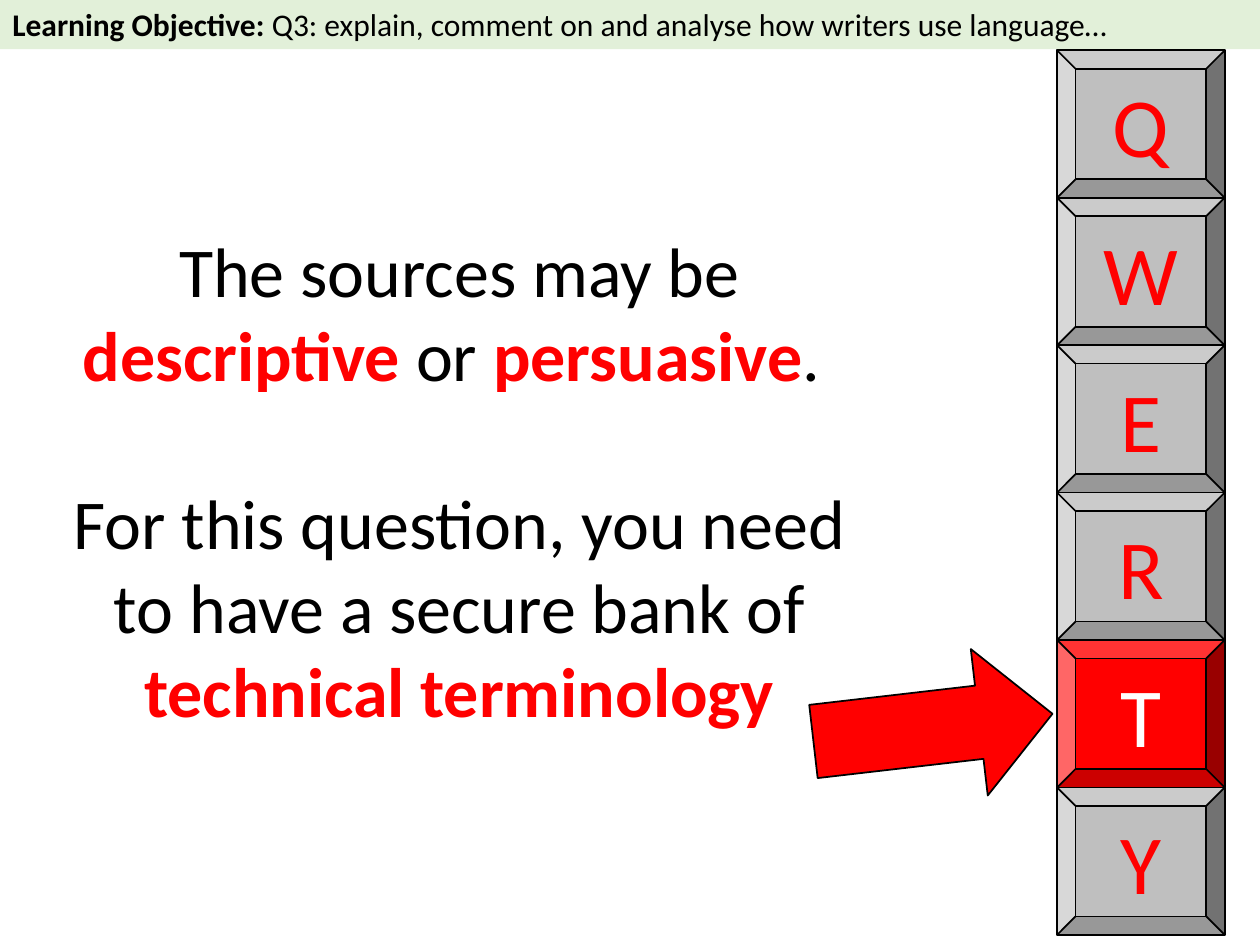
"""Build the QWERTY key slide about descriptive and persuasive sources."""
from pptx import Presentation
from pptx.dml.color import RGBColor
from pptx.enum.shapes import MSO_SHAPE
from pptx.enum.text import MSO_ANCHOR, PP_ALIGN
from pptx.util import Pt

PX = 9144
BLACK = RGBColor(0x00, 0x00, 0x00)
WHITE = RGBColor(0xFF, 0xFF, 0xFF)
RED = RGBColor(0xFF, 0x00, 0x00)
GREY = RGBColor(0xBF, 0xBF, 0xBF)
PALE_GREEN = RGBColor(0xE2, 0xF0, 0xD9)


def add_span(para, text, size, color=BLACK, bold=False):
    span = para.add_run()
    span.text = text
    span.font.name = "Calibri"
    span.font.size = Pt(size)
    span.font.color.rgb = color
    span.font.bold = bold


def add_box(page, kind, left, top, width, height, fill, outlined=True):
    box = page.shapes.add_shape(kind, left * PX, top * PX, width * PX, height * PX)
    box.shadow.inherit = False
    box.fill.solid()
    box.fill.fore_color.rgb = fill
    if outlined:
        box.line.color.rgb = BLACK
        box.line.width = Pt(1)
    else:
        box.line.fill.background()
    return box


deck = Presentation()
deck.slide_width = 1000 * PX
deck.slide_height = 750 * PX
page = deck.slides.add_slide(deck.slide_layouts[6])

banner = add_box(page, MSO_SHAPE.RECTANGLE, 0, -1, 1000, 40, PALE_GREEN, outlined=False)
banner.text_frame.vertical_anchor = MSO_ANCHOR.TOP
para = banner.text_frame.paragraphs[0]
para.alignment = PP_ALIGN.LEFT
add_span(para, "Learning Objective: ", 18, bold=True)
add_span(para, "Q3: explain, comment on and analyse how writers use language…", 18)

message = page.shapes.add_textbox(35 * PX, 176 * PX, 659 * PX, 414 * PX)
message.text_frame.word_wrap = True
para = message.text_frame.paragraphs[0]
para.alignment = PP_ALIGN.CENTER
add_span(para, "The sources may be ", 40)
add_span(para, "descriptive ", 40, RED, True)
add_span(para, "or ", 40)
add_span(para, "persuasive", 40, RED, True)
add_span(para, ". ", 40)
para = message.text_frame.add_paragraph()
para.alignment = PP_ALIGN.CENTER
para.space_before = Pt(48)
add_span(para, "For this question, you need to have a secure bank of ", 40)
add_span(para, "technical terminology", 40, RED, True)

for index, letter in enumerate("QWERTY"):
    fill, color = (RED, WHITE) if letter == "T" else (GREY, RED)
    key = add_box(page, MSO_SHAPE.BEVEL, 839, 40 + 117 * index, 133, 117, fill)
    key.text_frame.vertical_anchor = MSO_ANCHOR.MIDDLE
    para = key.text_frame.paragraphs[0]
    para.alignment = PP_ALIGN.CENTER
    add_span(para, letter, 48, color)

arrow = add_box(page, MSO_SHAPE.RIGHT_ARROW, 645, 519, 191, 117, RED)
arrow.rotation = 353.4

deck.save("out.pptx")
